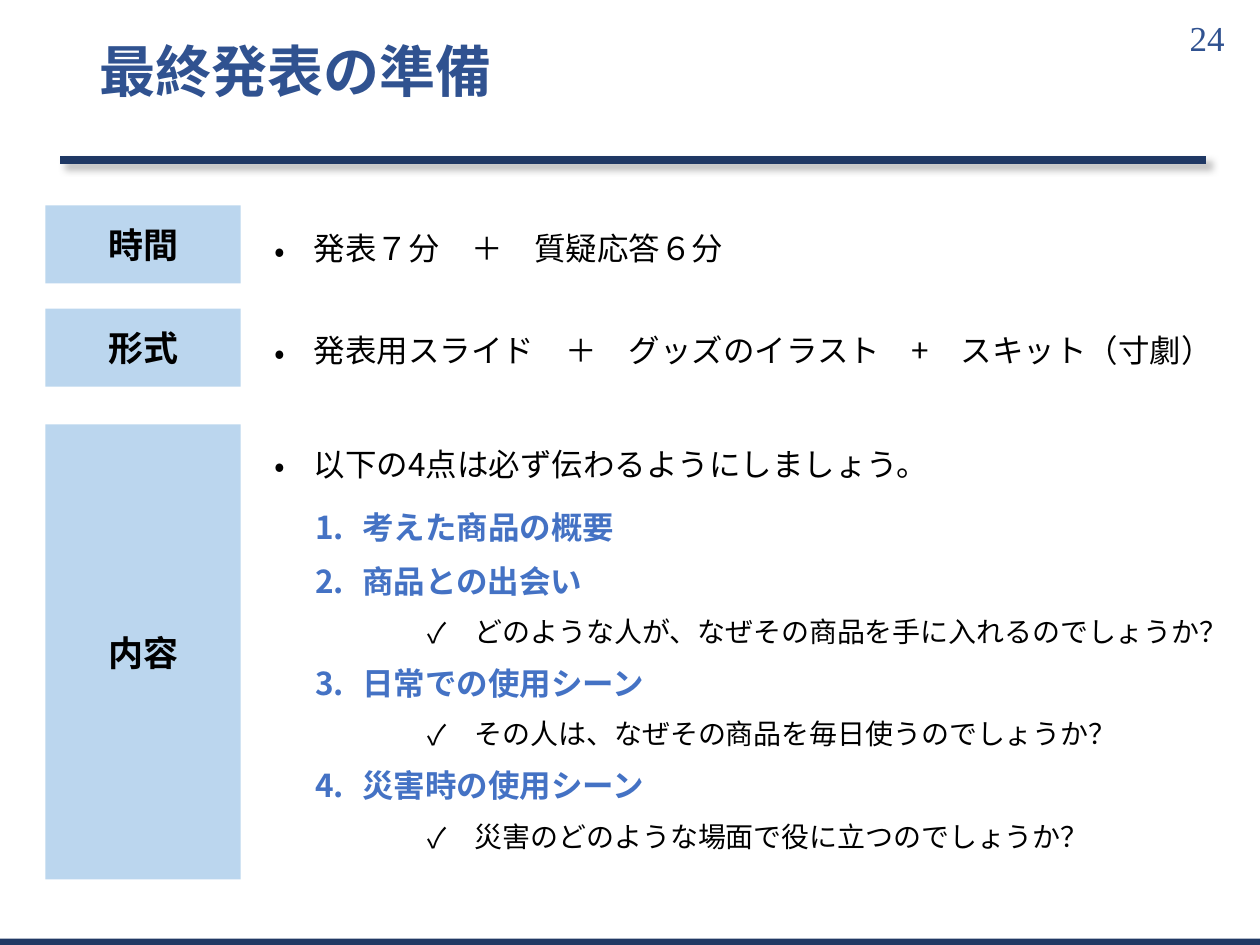
from lxml import etree
from pptx import Presentation
from pptx.dml.color import RGBColor
from pptx.enum.shapes import MSO_CONNECTOR, MSO_SHAPE
from pptx.enum.text import MSO_ANCHOR, MSO_AUTO_SIZE, PP_ALIGN
from pptx.oxml.ns import qn
from pptx.util import Pt

STRAIGHT, RECTANGLE = MSO_CONNECTOR.STRAIGHT, MSO_SHAPE.RECTANGLE
TOP, MIDDLE = MSO_ANCHOR.TOP, MSO_ANCHOR.MIDDLE
LEFT, CENTER, RIGHT = PP_ALIGN.LEFT, PP_ALIGN.CENTER, PP_ALIGN.RIGHT
NO_AUTOFIT = MSO_AUTO_SIZE.NONE

TITLE = "最終発表の準備"
PAGE_NUMBER = "24"
# label, label top, label height, text, text top, text width
SECTIONS = [
    ("時間", 117.4, 44.6, "発表７分　＋　質疑応答６分", 124.6, 375),
    ("形式", 176.4, 44.6, "発表用スライド　＋　グッズのイラスト　+　スキット（寸劇）", 182.9, 570),
    ("内容", 242.6, 260, "以下の4点は必ず伝わるようにしましょう。", 247.7, 435),
]
# point, question below it
POINTS = [
    ("考えた商品の概要", None),
    ("商品との出会い", "どのような人が、なぜその商品を手に入れるのでしょうか？"),
    ("日常での使用シーン", "その人は、なぜその商品を毎日使うのでしょうか？"),
    ("災害時の使用シーン", "災害のどのような場面で役に立つのでしょうか？"),
]
COLORS = {
    "title": "305290", "rule": "1F3864", "footer": "213964",
    "label": "BBD6EE", "text": "000000", "point": "4472C4",
}
SANS, SERIF = "Noto Sans CJK JP", "Times New Roman"
LABEL_LEFT, LABEL_WIDTH, TEXT_LEFT = 26, 111.6, 149.8
LINE_SPACING = 1.14


def color(name):
    return RGBColor.from_string(COLORS[name])


def add_bullet(para, mark, name, margin, hanging):
    """Give the paragraph a hanging bullet; mark "1." numbers it automatically."""
    props = para._p.get_or_add_pPr()
    props.set("marL", str(Pt(margin)))
    props.set("indent", str(-Pt(hanging)))
    fill = etree.SubElement(props, qn("a:buClr"))
    etree.SubElement(fill, qn("a:srgbClr"), val=COLORS[name])
    etree.SubElement(props, qn("a:buFont"), typeface=SANS)
    if mark == "1.":
        etree.SubElement(props, qn("a:buAutoNum"), type="arabicPeriod")
    else:
        etree.SubElement(props, qn("a:buChar"), char=mark)


def write(para, text, size=18, name="text", bold=False, font=SANS,
          align=LEFT, spacing=1.0, before=0):
    para.alignment, para.line_spacing = align, spacing
    para.space_before, para.space_after = Pt(before), Pt(0)
    span = para.add_run()
    span.text = text
    span.font.size, span.font.bold, span.font.name = Pt(size), bold, font
    span.font.color.rgb = color(name)
    latin = span._r.rPr.find(qn("a:latin"))
    latin.addnext(etree.Element(qn("a:ea"), typeface=font))


def prepare(shape, anchor=TOP, wrap=True, inset=3.6):
    box = shape.text_frame
    box.word_wrap, box.auto_size, box.vertical_anchor = wrap, NO_AUTOFIT, anchor
    box.margin_left = box.margin_right = Pt(7.2)
    box.margin_top = box.margin_bottom = Pt(inset)
    return box


def place(shape, left, top, width, height):
    shape.left, shape.top, shape.width, shape.height = map(Pt, (left, top, width, height))


def add_box(page, left, top, width, height, **format):
    shape = page.shapes.add_textbox(*map(Pt, (left, top, width, height)))
    return prepare(shape, **format)


def add_block(page, left, top, width, height, name):
    shape = page.shapes.add_shape(RECTANGLE, *map(Pt, (left, top, width, height)))
    shape.shadow.inherit = False
    shape.fill.solid()
    shape.fill.fore_color.rgb = color(name)
    shape.line.fill.background()
    return shape


def add_rule(page, left, right, top):
    rule = page.shapes.add_connector(STRAIGHT, Pt(left), Pt(top), Pt(right), Pt(top))
    rule.line.color.rgb, rule.line.width = color("rule"), Pt(5)
    effects = etree.SubElement(rule._element.spPr, qn("a:effectLst"))
    shadow = etree.SubElement(effects, qn("a:outerShdw"), blurRad=str(Pt(4)),
                              dist=str(Pt(4)), dir=str(45 * 60000), rotWithShape="0")
    shade = etree.SubElement(shadow, qn("a:srgbClr"), val=COLORS["text"])
    etree.SubElement(shade, qn("a:alpha"), val="25000")


def add_points(body):
    para = body.paragraphs[0]
    for number, (point, question) in enumerate(POINTS):
        if number:
            para = body.add_paragraph()
        add_bullet(para, "1.", "point", 27, 27)
        write(para, point, name="point", bold=True, spacing=LINE_SPACING,
              before=6 if number else 0)
        if question:
            para = body.add_paragraph()
            para.level = 1
            add_bullet(para, "✓", "text", 91.4, 27)
            write(para, question, size=16, spacing=LINE_SPACING, before=6)


def main():
    deck = Presentation()
    deck.slide_width, deck.slide_height = Pt(720), Pt(540)
    page = deck.slides.add_slide(deck.slide_layouts[1])
    title, body = page.placeholders

    number = add_box(page, 663, 7.2, 44, 28.8, anchor=MIDDLE, wrap=False)
    write(number.paragraphs[0], PAGE_NUMBER, size=20, name="title", font=SERIF, align=RIGHT)
    add_rule(page, 34.5, 689, 91.5)
    add_block(page, 0, 536.4, 720, 7.2, "footer")

    place(title, 49.7, 13.7, 620.6, 57.6)
    heading = prepare(title, anchor=MIDDLE, inset=0)
    write(heading.paragraphs[0], TITLE, size=32, name="title", bold=True, spacing=0.9)

    for label, top, height, text, text_top, width in SECTIONS:
        block = add_block(page, LABEL_LEFT, top, LABEL_WIDTH, height, "label")
        write(prepare(block, anchor=MIDDLE).paragraphs[0], label, size=20,
              bold=True, align=CENTER)
        para = add_box(page, TEXT_LEFT, text_top, width, 31).paragraphs[0]
        add_bullet(para, "•", "text", 22.5, 22.5)
        write(para, text, spacing=LINE_SPACING)

    place(body, 172.8, 283.7, 547.2, 218.9)
    add_points(prepare(body))
    deck.save("out.pptx")


if __name__ == "__main__":
    main()
